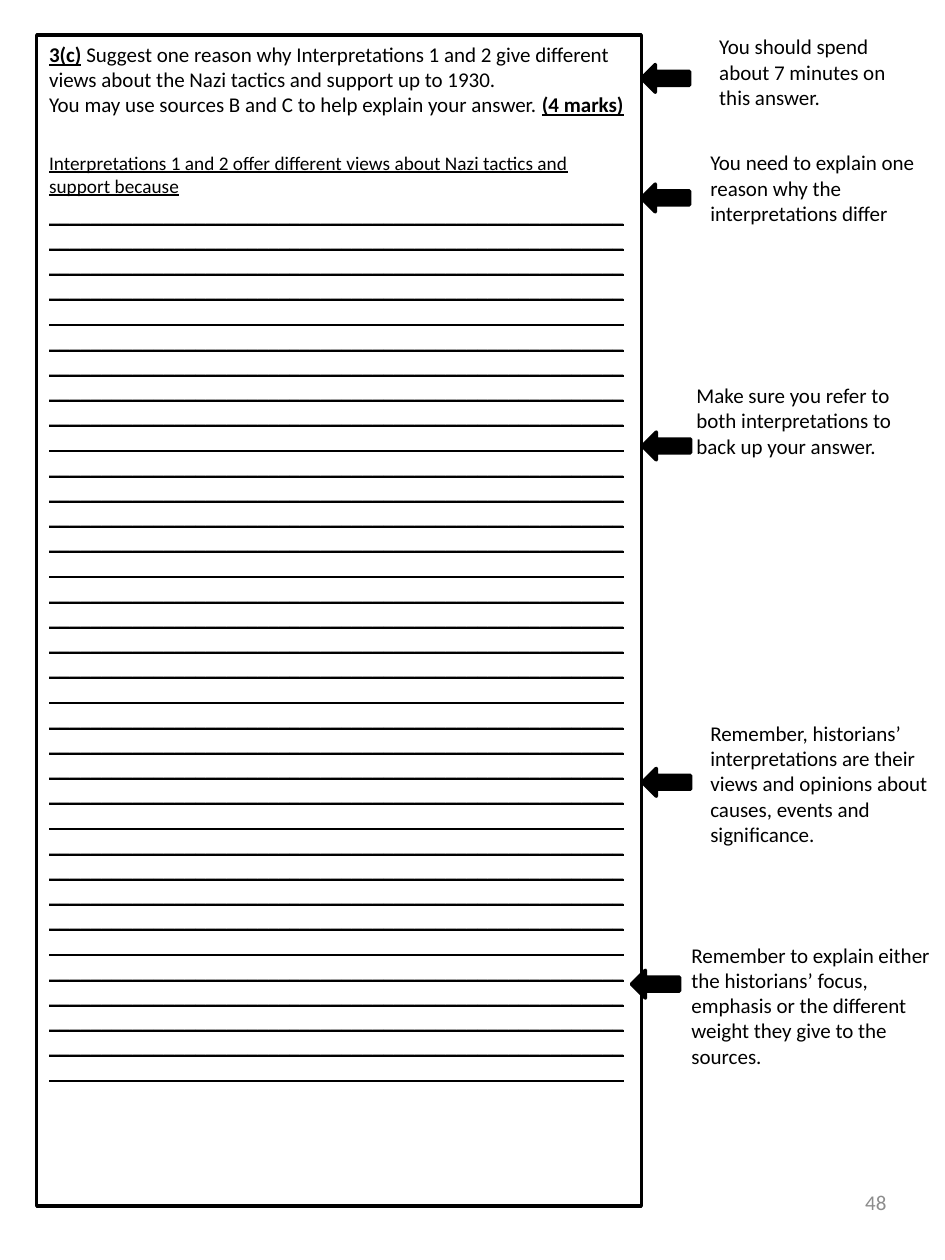
from dataclasses import dataclass
from typing import Any

import pptx
import pptx.dml.color
import pptx.enum.shapes
import pptx.enum.text
import pptx.util

Cm = pptx.util.Cm
Pt = pptx.util.Pt
Anchor = pptx.enum.text.MSO_ANCHOR
Align = pptx.enum.text.PP_ALIGN
AutoSize = pptx.enum.text.MSO_AUTO_SIZE
ShapeType = pptx.enum.shapes.MSO_SHAPE

COLOURS = {"ink": "000000", "paper": "FFFFFF", "page_number": "8C8C8C"}
BODY_FONT = {"name": "Calibri", "size": Pt(12), "bold": False, "underline": False}
STRONG_FONT = BODY_FONT | {"bold": True, "underline": True}
STARTER_FONT = BODY_FONT | {"size": Pt(11), "underline": True}
RULED_FONT = BODY_FONT | {"underline": True}
TOP_FRAME = {"word_wrap": True, "vertical_anchor": Anchor.TOP}
NOTE_FRAME = TOP_FRAME | {"auto_size": AutoSize.SHAPE_TO_FIT_TEXT}
NUMBER_FRAME = {"word_wrap": True, "vertical_anchor": Anchor.MIDDLE}
ANSWER_LINES = 35
CHARACTERS_PER_LINE = 55


@dataclass(frozen=True)
class Box:
    left: float
    top: float
    width: float
    height: float

    def lengths(self) -> tuple:
        return tuple(Cm(value) for value in (self.left, self.top, self.width, self.height))


@dataclass(frozen=True)
class Hint:
    text: str
    box: Box
    arrow_left: float
    arrow_top: float


@dataclass(frozen=True)
class Passage:
    space_before: float
    runs: tuple


HINTS = (
    Hint("You should spend about 7 minutes on this answer.",
         Box(13.54, 0.56, 5.18, 1.8), 12.93, 1.3),
    Hint("You need to explain one reason why the interpretations differ",
         Box(13.36, 2.9, 5.36, 1.8), 12.93, 3.71),
    Hint("Make sure you refer to both interpretations to back up your answer.",
         Box(13.08, 7.59, 5.26, 1.8), 12.95, 8.71),
    Hint("Remember, historians’ interpretations are their views and opinions about causes, "
         "events and significance.",
         Box(13.36, 14.4, 5.69, 2.82), 12.95, 15.49),
    Hint("Remember to explain either the historians’ focus, emphasis or the different "
         "weight they give to the sources.",
         Box(12.98, 18.87, 6.15, 2.82), 12.73, 19.56),
)

PASSAGES = (
    Passage(2.4, (
        ("3(c)", STRONG_FONT),
        (" Suggest one reason why Interpretations 1 and 2 give different views about the "
         "Nazi tactics and support up to 1930. \vYou may use sources B and C to help "
         "explain your answer. ", BODY_FONT),
        ("(4 marks)", STRONG_FONT),
    )),
    Passage(19.4, (
        ("Interpretations 1 and 2 offer different views about Nazi tactics and support because",
         STARTER_FONT),
    )),
    Passage(2.4, (("_" * (ANSWER_LINES * CHARACTERS_PER_LINE), RULED_FONT),)),
)


def colour(name: str) -> pptx.dml.color.RGBColor:
    return pptx.dml.color.RGBColor.from_string(COLOURS[name])


def apply_format(target: Any, values: dict) -> None:
    for name, value in values.items():
        setattr(target, name, value)


def add_run(paragraph: Any, text: str, font: dict, ink: str = "ink") -> None:
    for index, part in enumerate(text.split("\v")):
        if index:
            paragraph.add_line_break()
        run = paragraph.add_run()
        run.text = part
        apply_format(run.font, font)
        run.font.color.rgb = colour(ink)


def add_outlined_shape(slide: Any, kind: Any, box: Box, fill: str) -> Any:
    shape = slide.shapes.add_shape(kind, *box.lengths())
    shape.shadow.inherit = False
    shape.fill.solid()
    shape.fill.fore_color.rgb = colour(fill)
    shape.line.color.rgb = colour("ink")
    shape.line.width = Pt(2)
    return shape


def add_answer_sheet(slide: Any) -> None:
    shape = add_outlined_shape(slide, ShapeType.RECTANGLE, Box(0.74, 0.71, 12.19, 23.6), "paper")
    frame = shape.text_frame
    apply_format(frame, TOP_FRAME)
    for index, passage in enumerate(PASSAGES):
        paragraph = frame.add_paragraph() if index else frame.paragraphs[0]
        apply_format(paragraph, {"alignment": Align.LEFT, "space_before": Pt(passage.space_before)})
        for text, font in passage.runs:
            add_run(paragraph, text, font)


def add_text(slide: Any, box: Box, text: str, frame_format: dict,
             paragraph_format: dict, ink: str = "ink") -> Any:
    frame = slide.shapes.add_textbox(*box.lengths()).text_frame
    apply_format(frame, frame_format)
    paragraph = frame.paragraphs[0]
    apply_format(paragraph, paragraph_format)
    add_run(paragraph, text, BODY_FONT, ink)
    return paragraph


def add_hint(slide: Any, hint: Hint) -> None:
    arrow_box = Box(hint.arrow_left, hint.arrow_top, 0.97, 0.56)
    arrow = add_outlined_shape(slide, ShapeType.RIGHT_ARROW, arrow_box, "ink")
    arrow.rotation = 180
    paragraph = add_text(slide, hint.box, hint.text, NOTE_FRAME,
                         {"alignment": Align.LEFT, "space_after": Pt(10)})
    properties = paragraph._p.get_or_add_pPr()
    properties.set("marL", str(Cm(0.71)))
    properties.set("indent", "0")


def main() -> None:
    presentation = pptx.Presentation()
    apply_format(presentation, {"slide_width": Cm(19.05), "slide_height": Cm(25.4)})
    slide = presentation.slides.add_slide(presentation.slide_layouts[6])
    add_answer_sheet(slide)
    for hint in HINTS:
        add_hint(slide, hint)
    add_text(slide, Box(13.67, 23.55, 4.45, 1.35), "48", NUMBER_FRAME,
             {"alignment": Align.RIGHT}, "page_number")
    presentation.save("out.pptx")


if __name__ == "__main__":
    main()
